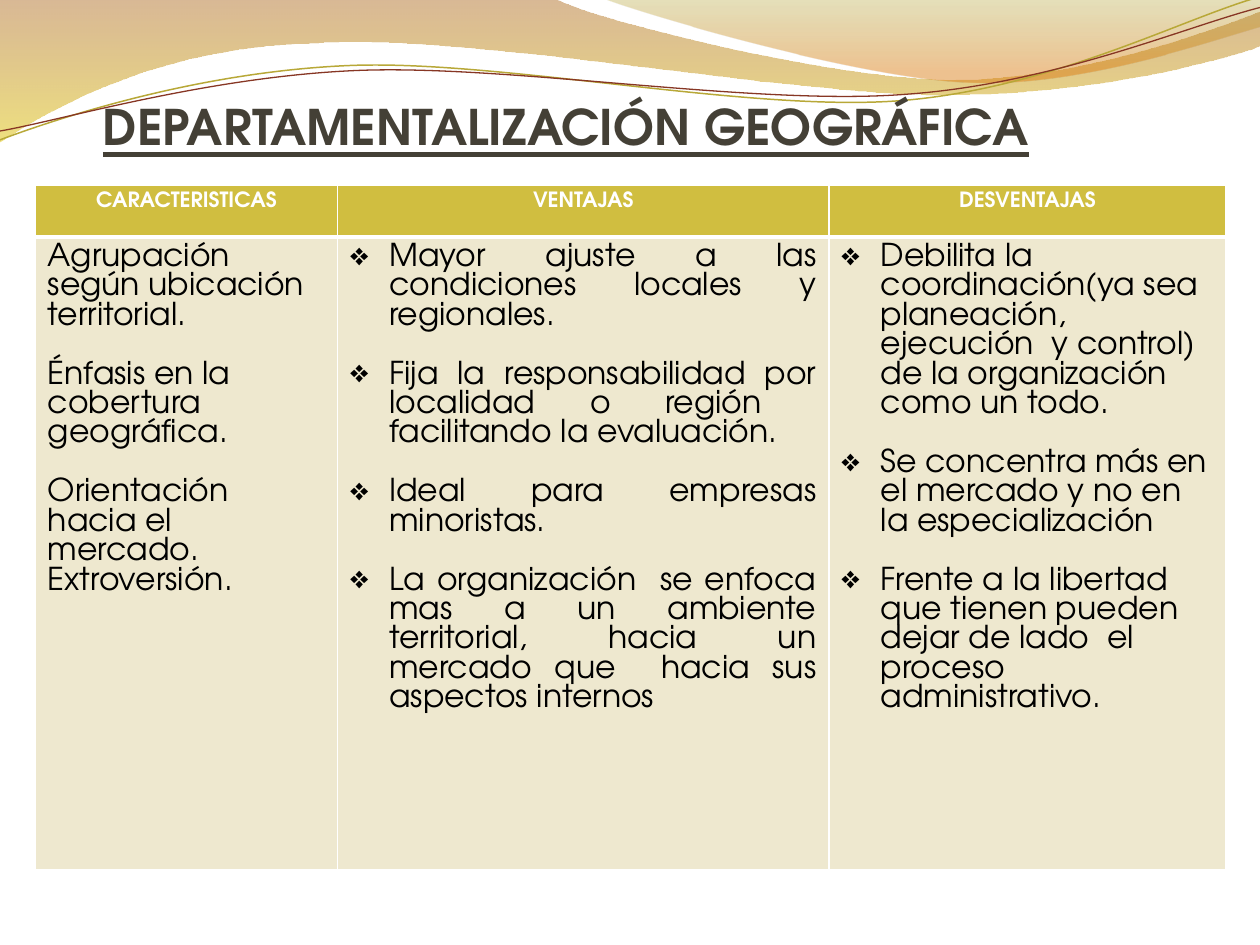
from math import cos, radians, sin

from lxml import etree
from pptx import Presentation
from pptx.dml.color import RGBColor
from pptx.enum.text import MSO_ANCHOR, PP_ALIGN
from pptx.oxml.ns import qn
from pptx.util import Inches, Pt

LEFT, CENTER, JUSTIFY = PP_ALIGN.LEFT, PP_ALIGN.CENTER, PP_ALIGN.JUSTIFY
BOTTOM = MSO_ANCHOR.BOTTOM
FONT = "TeX Gyre Adventor"
BULLET_FONT = "OpenSymbol"
TITLE_ONLY = 5
LINE_GAP = Pt(16.8)
CURVE_TILT = -2.7

# Each step is a line end (one point) or a Bézier curve (two controls and an end).
BACK_WAVE = [
    [(4.4, -0.01)],
    [(4.76, 0.17), (6.64, 0.63), (7.58, 0.63)],
    [(8.53, 0.63), (9.58, 0.26), (10, 0.09)],
    [(10.01, 0.36)],
    [(9.83, 0.44), (8.7, 0.76), (7.46, 0.75)],
    [(6.22, 0.75), (3.82, 0.28), (2.57, 0.34)],
    [(1.29, 0.36), (0.46, 0.83), (-0.01, 1.13)],
    [(0, 0)],
]
FRONT_WAVE = [
    [(5.09, 0.11), (6.82, 0.62), (7.69, 0.65)],
    [(8.56, 0.69), (9.61, 0.32), (10, 0.21)],
    [(10, 0)],
    [(4.79, -0.01)],
]
GOLD_LINE = [
    [(0.48, 0.93), (1.58, 0.57), (2.77, 0.52)],
    [(3.95, 0.47), (5.93, 0.89), (7.13, 0.8)],
    [(8.33, 0.71), (9.38, 0.15), (9.98, -0.02)],
]
RED_LINE = [
    [(0.47, 0.96), (1.64, 0.61), (2.83, 0.56)],
    [(4.03, 0.51), (5.97, 0.84), (7.17, 0.75)],
    [(8.36, 0.67), (9.41, 0.21), (10, 0.06)],
]

HEADINGS = ["CARACTERISTICAS", "VENTAJAS", "DESVENTAJAS"]
FEATURES = [
    "Agrupación según ubicación territorial.",
    "Énfasis en la cobertura geográfica.",
    "Orientación  hacia el mercado.",
    "Extroversión.",
]
ADVANTAGES = [
    "Mayor ajuste a las condiciones locales y regionales.",
    "Fija la responsabilidad por localidad o región  facilitando la evaluación.",
    "Ideal para empresas minoristas.",
    "La organización  se enfoca mas a un ambiente territorial, hacia un mercado que  "
    "hacia sus aspectos internos",
]
DRAWBACKS = [
    "Debilita la coordinación(ya sea planeación, ejecución  y control) de la "
    "organización como un todo.",
    "Se concentra más en el mercado y no en la especialización",
    "Frente a la libertad  que tienen pueden dejar de lado  el proceso administrativo.",
]


def color(value):
    return RGBColor.from_string(value)


def write(para, text, size, hue, bold=False, underline=False, align=LEFT,
          bullet=None, before=0):
    para.alignment = align
    para.space_before = before
    span = para.add_run()
    span.text = text
    font = span.font
    font.name, font.size, font.bold = FONT, Pt(size), bold
    font.underline = underline
    font.color.rgb = color(hue)
    if bullet:
        props = para._p.get_or_add_pPr()
        props.set("marL", str(Inches(0.31)))
        props.set("indent", str(-Inches(0.31)))
        etree.SubElement(props, qn("a:buFont")).set("typeface", BULLET_FONT)
        etree.SubElement(props, qn("a:buChar")).set("char", bullet)


def add_path(page, start, steps, close=False):
    """Draw a freeform whose three-point steps become Bézier curves."""
    points = [(Inches(x), Inches(y)) for step in steps for x, y in step]
    builder = page.shapes.build_freeform(Inches(start[0]), Inches(start[1]))
    builder.add_line_segments(points, close=close)
    shape = builder.convert_to_shape()
    shape.shadow.inherit = False
    segments = iter(list(shape.element.iter(qn("a:lnTo"))))
    for step in steps:
        group = [next(segments) for _ in step]
        if len(group) == 3:
            curve = etree.Element(qn("a:cubicBezTo"))
            group[0].addprevious(curve)
            for segment in group:
                curve.append(segment[0])
                segment.getparent().remove(segment)
    return shape


def add_wave(page, start, steps, stops):
    """Draw a filled wave; stops are (position, colour, opacity), top to bottom."""
    wave = add_path(page, start, steps, close=True)
    wave.line.fill.background()
    wave.fill.gradient()
    wave.fill.gradient_angle = 270
    for stop, (position, hue, opacity) in zip(wave.fill.gradient_stops, stops):
        stop.position = position
        stop.color.rgb = color(hue)
        tint = stop._gs.find(qn("a:srgbClr"))
        etree.SubElement(tint, qn("a:alpha")).set("val", str(opacity * 1000))


def turn(point, center, angle):
    """Return a point turned clockwise about a center."""
    across, down = point[0] - center[0], point[1] - center[1]
    cosine, sine = cos(radians(angle)), sin(radians(angle))
    return (center[0] + across * cosine - down * sine,
            center[1] + across * sine + down * cosine)


def add_curve(page, start, steps, center, hue, width):
    """Draw a line in a tilted box; the points say where it shows on the slide."""
    level = [[turn(point, center, -CURVE_TILT) for point in step] for step in steps]
    curve = add_path(page, turn(start, center, -CURVE_TILT), level)
    curve.rotation = CURVE_TILT
    curve.fill.background()
    curve.line.color.rgb = color(hue)
    curve.line.width = Pt(width)


def add_title(page, text):
    title = page.shapes.title
    title.left, title.top = Inches(0.2), Inches(0.6)
    title.width, title.height = Inches(8.58), Inches(1.1)
    frame = title.text_frame
    frame.vertical_anchor = BOTTOM
    frame.margin_left = frame.margin_right = 0
    frame.margin_bottom = Inches(0.47)
    write(frame.paragraphs[0], text, 28, "444036", bold=True, underline=True, align=CENTER)
    # Bring the title in front of the waves.
    title.element.getparent().append(title.element)


def format_cell(cell, hue, bottom):
    """Fill a cell and give it white borders, the lower one of its own width."""
    cell.fill.solid()
    cell.fill.fore_color.rgb = color(hue)
    props = cell._tc.get_or_add_tcPr()
    for index, (side, width) in enumerate(zip("LRTB", (1, 1, 1, bottom))):
        border = etree.Element(qn(f"a:ln{side}"), w=str(Pt(width)))
        solid = etree.SubElement(border, qn("a:solidFill"))
        etree.SubElement(solid, qn("a:srgbClr")).set("val", "FFFFFF")
        props.insert(index, border)


def fill_list(cell, items, tight=(), **style):
    """Write one paragraph an item, with a line between all but the tight ones."""
    frame = cell.text_frame
    for index, item in enumerate(items):
        para = frame.add_paragraph() if index else frame.paragraphs[0]
        gap = LINE_GAP if index and item not in tight else 0
        write(para, item, 18, "000000", before=gap, **style)


def add_comparison(page):
    frame = page.shapes.add_table(2, 3, Inches(0.28), Inches(1.47), Inches(9.45), Inches(5.43))
    table = frame.table
    for column, width in zip(table.columns, (2.4, 3.9, 3.15)):
        column.width = Inches(width)
    for row, height in zip(table.rows, (0.41, 5.02)):
        row.height = Inches(height)
    for index, heading in enumerate(HEADINGS):
        header, body = table.cell(0, index), table.cell(1, index)
        format_cell(header, "D0BE40", 3)
        format_cell(body, "EEE8CF", 1)
        write(header.text_frame.paragraphs[0], heading, 12, "FFFFFF", bold=True, align=CENTER)
    fill_list(table.cell(1, 0), FEATURES, tight=FEATURES[-1:])
    fill_list(table.cell(1, 1), ADVANTAGES, align=JUSTIFY, bullet="❖")
    fill_list(table.cell(1, 2), DRAWBACKS, bullet="❖")


def main():
    deck = Presentation()
    deck.slide_width, deck.slide_height = Inches(10), Inches(7.5)
    page = deck.slides.add_slide(deck.slide_layouts[TITLE_ONLY])
    add_wave(page, (0, 0), BACK_WAVE, [(0, "AB6415", 45), (1, "E1C716", 55)])
    add_wave(page, (4.79, -0.01), FRONT_WAVE, [(0, "AA991F", 30), (0.8, "DB780A", 45)])
    add_curve(page, (0, 1.11), GOLD_LINE, (4.99, 0.58), "B8A838", 0.85)
    add_curve(page, (0, 1.04), RED_LINE, (5, 0.59), "873624", 0.75)
    add_title(page, "DEPARTAMENTALIZACIÓN GEOGRÁFICA")
    add_comparison(page)
    deck.save("out.pptx")


if __name__ == "__main__":
    main()
